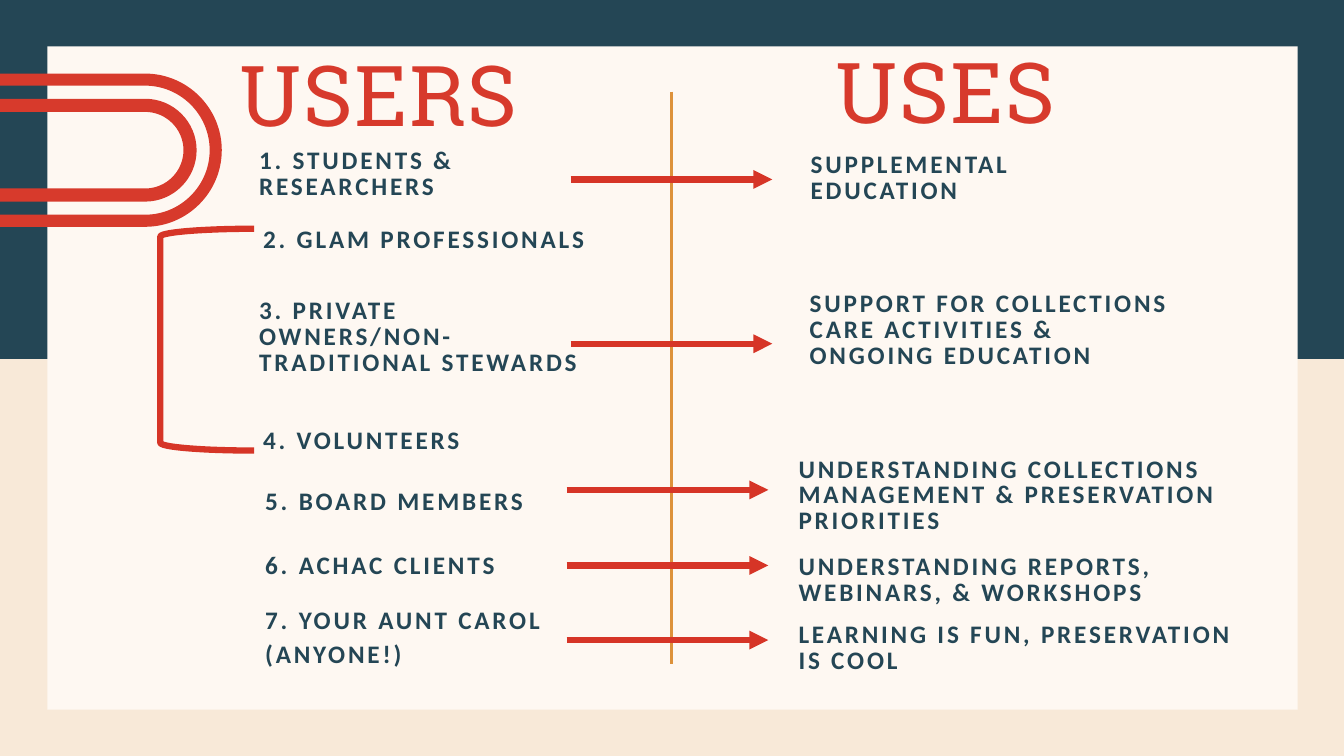
"""Build the slide that links users on the left to uses on the right."""
from dataclasses import dataclass

from lxml.etree import SubElement
from pptx import Presentation
from pptx.dml.color import RGBColor
from pptx.enum.shapes import MSO_CONNECTOR, MSO_SHAPE
from pptx.enum.text import MSO_ANCHOR, MSO_AUTO_SIZE, PP_ALIGN
from pptx.oxml.ns import qn
from pptx.util import Inches, Pt

NAVY = RGBColor(0x24, 0x46, 0x55)
CREAM = RGBColor(0xFE, 0xF8, 0xF2)
SAND = RGBColor(0xF8, 0xE9, 0xD8)
RED = RGBColor(0xD7, 0x3A, 0x2C)
ARROW_RED = RGBColor(0xD6, 0x35, 0x27)
OCHRE = RGBColor(0xDD, 0x92, 0x3B)


@dataclass(frozen=True)
class Style:
    font: str
    size: int
    color: RGBColor
    bold: bool
    tracking: int
    line_spacing: float
    space_after: int
    anchor: MSO_ANCHOR


@dataclass(frozen=True)
class Label:
    text: str
    left: float
    top: float
    width: float = 3.61
    height: float = 0.37


@dataclass(frozen=True)
class Panel:
    left: float
    top: float
    width: float
    height: float
    color: RGBColor


HEADING = Style("Roboto Slab", 60, RED, False, 100, Pt(60), 0, MSO_ANCHOR.BOTTOM)
ENTRY = Style("Calibri", 18, NAVY, True, 200, 0.85, 6, MSO_ANCHOR.TOP)

PANELS = [Panel(0, 0, 13.33, 3.56, NAVY), Panel(0.47, 0.46, 12.4, 6.58, CREAM)]
BAND_RADII = [(0.76, 0.64), (0.51, 0.38)]
ARROWS = [(5.66, 1.78), (5.66, 3.41), (5.62, 4.86), (5.62, 5.61), (5.62, 6.35)]
ARROW_LENGTH = 2

USERS_TITLE = Label("USERS", 2.25, 0.63, 3.54, 0.86)
USES_TITLE = Label("USES", 8.16, 0.6, 3.54, 0.86)
USERS = [
    Label("1. STUDENTS & RESEARCHERS", 2.44, 1.41),
    Label("2. GLAM PROFESSIONALS", 2.48, 2.19),
    Label("3. PRIVATE OWNERS/NON-TRADITIONAL STEWARDS", 2.44, 2.9),
    Label("4. VOLUNTEERS", 2.48, 4.19),
    Label("5. BOARD MEMBERS", 2.5, 4.79),
    Label("6. ACHAC CLIENTS", 2.5, 5.43, 4.81),
    Label("7. YOUR AUNT CAROL\n(ANYONE!)", 2.5, 5.97, 4.81),
]
USES = [
    Label("SUPPLEMENTAL EDUCATION", 7.91, 1.45),
    Label("SUPPORT FOR COLLECTIONS CARE ACTIVITIES & ONGOING EDUCATION", 7.9, 2.83, 3.92, 0.56),
    Label("UNDERSTANDING COLLECTIONS MANAGEMENT & PRESERVATION PRIORITIES", 7.79, 4.47, 4.85, 0.56),
    Label("UNDERSTANDING REPORTS, WEBINARS, & WORKSHOPS", 7.79, 5.44, 4.85, 0.56),
    Label("LEARNING IS FUN, PRESERVATION IS COOL", 7.79, 6.11, 4.85, 0.56),
]


def fill_plain(shape, color: RGBColor) -> None:
    """Give a shape a flat fill without outline or shadow."""
    shape.fill.solid()
    shape.fill.fore_color.rgb = color
    shape.line.fill.background()
    shape.shadow.inherit = False


def add_panel(page, panel: Panel) -> None:
    """Draw a flat rectangle."""
    box = page.shapes.add_shape(
        MSO_SHAPE.RECTANGLE, Inches(panel.left), Inches(panel.top),
        Inches(panel.width), Inches(panel.height))
    fill_plain(box, panel.color)


def half_loop(radius: float) -> list[tuple[int, int]]:
    """Return the points of a U from the left edge, with two curves' handles."""
    center_x, center_y, handle = 1.44, 1.49, 0.55 * radius
    turn = [(0, -radius), (handle, -radius), (radius, -handle), (radius, 0),
            (radius, handle), (handle, radius), (0, radius)]
    curve = [(center_x + x, center_y + y) for x, y in turn]
    points = [(0, center_y - radius), *curve, (0, center_y + radius)]
    return [(Inches(x), Inches(y)) for x, y in points]


def add_band(page, outer: float, inner: float) -> None:
    """Draw a U-shaped band that enters from the left edge and turns back."""
    points = half_loop(outer) + half_loop(inner)[::-1]
    builder = page.shapes.build_freeform(*points[0])
    builder.add_line_segments(points[1:], close=True)
    band = builder.convert_to_shape()
    segments = list(band.element.iter(qn("a:lnTo")))
    for first in (1, 4, 10, 13):
        curve, *rest = segments[first:first + 3]
        curve.tag = qn("a:cubicBezTo")
        for segment in rest:
            curve.append(segment[0])
            segment.getparent().remove(segment)
    fill_plain(band, RED)


def add_line(page, start: tuple[float, float], end: tuple[float, float],
             color: RGBColor, weight: float, arrow: bool = False) -> None:
    """Draw a straight line, with an arrowhead at its end if asked."""
    line = page.shapes.add_connector(
        MSO_CONNECTOR.STRAIGHT, *(Inches(value) for value in (*start, *end)))
    line.line.color.rgb = color
    line.line.width = Pt(weight)
    if arrow:
        SubElement(line.line._get_or_add_ln(), qn("a:tailEnd"), type="triangle")
    SubElement(line.element.spPr, qn("a:effectLst"))


def add_bracket(page) -> None:
    """Draw the bracket that joins users two to four."""
    bracket = page.shapes.add_shape(
        MSO_SHAPE.LEFT_BRACKET, Inches(1.59), Inches(2.27), Inches(0.93), Inches(2.2))
    bracket.fill.background()
    bracket.line.color.rgb = ARROW_RED
    bracket.line.width = Pt(4.5)
    bracket.shadow.inherit = False


def write_label(page, label: Label, style: Style, holder=None) -> None:
    """Write a label into a placeholder, or into a new text box."""
    place = [Inches(v) for v in (label.left, label.top, label.width, label.height)]
    box = holder if holder is not None else page.shapes.add_textbox(*place)
    box.left, box.top, box.width, box.height = place
    box.element.getparent().append(box.element)
    frame = box.text_frame
    frame.text = label.text
    frame.word_wrap = True
    frame.auto_size = MSO_AUTO_SIZE.NONE
    frame.vertical_anchor = style.anchor
    frame.margin_left = frame.margin_right = Inches(0.13)
    frame.margin_top = frame.margin_bottom = Inches(0.07)
    for para in frame.paragraphs:
        para.alignment = PP_ALIGN.LEFT
        para.line_spacing = style.line_spacing
        para.space_before = Pt(0)
        para.space_after = Pt(style.space_after)
        para.font.name = style.font
        para.font.size = Pt(style.size)
        para.font.bold = style.bold
        para.font.color.rgb = style.color
        properties = para._p.get_or_add_pPr()
        properties.set("marL", "0")
        properties.set("indent", "0")
        properties.find(qn("a:defRPr")).addprevious(SubElement(properties, qn("a:buNone")))
        for span in para.runs:
            span.font._element.set("spc", str(style.tracking))


def main() -> None:
    """Build and save the deck."""
    deck = Presentation()
    deck.slide_width, deck.slide_height = Inches(13.33), Inches(7.5)
    page = deck.slides.add_slide(deck.slide_layouts.get_by_name("Comparison"))
    page.background.fill.solid()
    page.background.fill.fore_color.rgb = SAND
    title, *bodies = list(page.placeholders)

    for panel in PANELS:
        add_panel(page, panel)
    for outer, inner in BAND_RADII:
        add_band(page, outer, inner)
    add_line(page, (6.66, 0.91), (6.66, 6.59), OCHRE, 2.25)

    write_label(page, USERS_TITLE, HEADING, title)
    write_label(page, USES_TITLE, HEADING)
    for label, body in zip(USERS, bodies):
        write_label(page, label, ENTRY, body)
    for label in USERS[len(bodies):] + USES:
        write_label(page, label, ENTRY)
    for left, top in ARROWS:
        add_line(page, (left, top), (left + ARROW_LENGTH, top), ARROW_RED, 4.5, arrow=True)
    add_bracket(page)
    deck.save("out.pptx")


if __name__ == "__main__":
    main()
